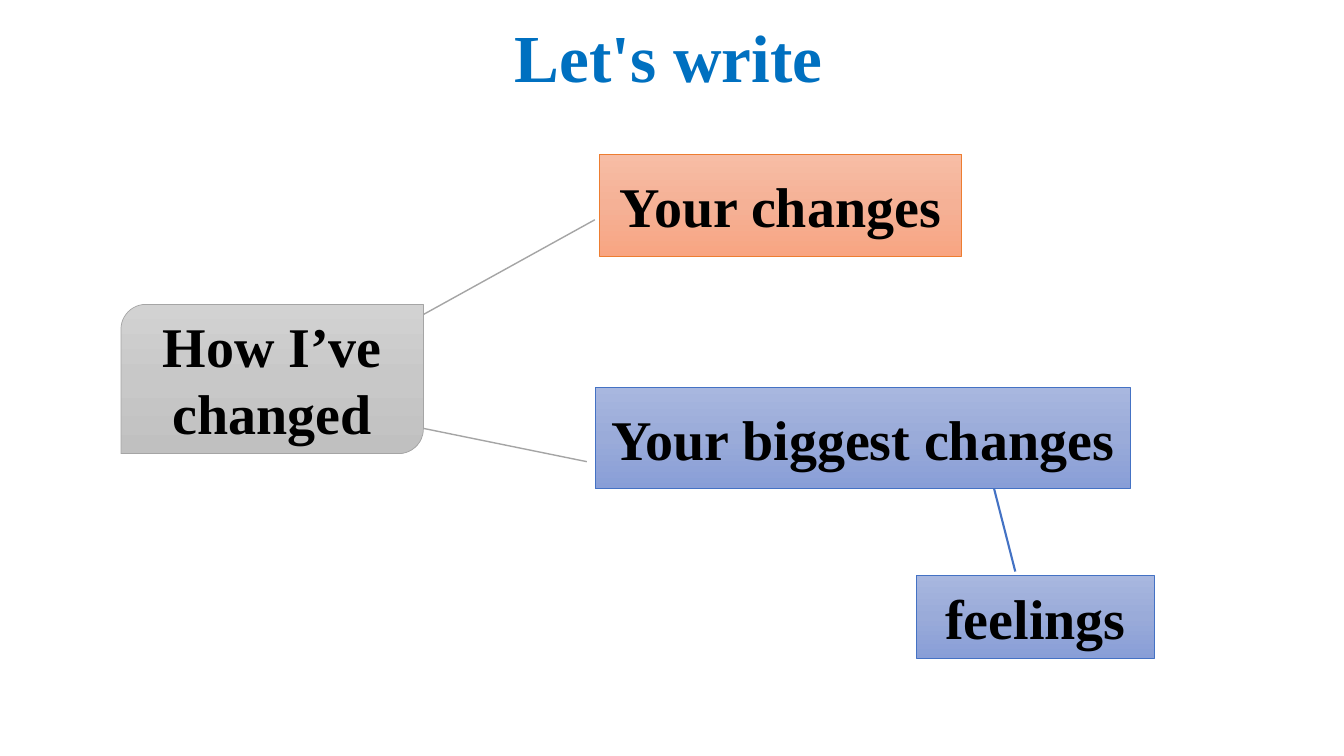
from copy import deepcopy

from lxml import etree
from pptx import Presentation
from pptx import util as u
from pptx.dml.color import RGBColor
from pptx.enum import shapes, text
from pptx.oxml import ns

BLACK = RGBColor(0x00, 0x00, 0x00)
TITLE_BLUE = RGBColor(0x00, 0x70, 0xC0)
GRAY = RGBColor(0xA5, 0xA5, 0xA5)
ORANGE = RGBColor(0xED, 0x7D, 0x31)
BLUE = RGBColor(0x44, 0x72, 0xC4)
GRAY_FILL = (RGBColor(0xD2, 0xD2, 0xD2), RGBColor(0xC8, 0xC8, 0xC8), RGBColor(0xC0, 0xC0, 0xC0))
ORANGE_FILL = (RGBColor(0xF7, 0xBD, 0xA5), RGBColor(0xF5, 0xB1, 0x96), RGBColor(0xF8, 0xA5, 0x82))
BLUE_FILL = (RGBColor(0xA8, 0xB7, 0xDF), RGBColor(0x9A, 0xAB, 0xD9), RGBColor(0x88, 0x9E, 0xD7))
RECT = shapes.MSO_SHAPE.RECTANGLE
ROOT = shapes.MSO_SHAPE.ROUND_2_DIAG_RECTANGLE


class MindMap:
    font_name = "Times New Roman"

    def __init__(self, prs):
        self.s = prs.slides.add_slide(prs.slide_layouts[5])

    def label(self, tf, words, size, color):
        tf.text = words
        p = tf.paragraphs[0]
        p.alignment = text.PP_ALIGN.CENTER
        p.font.name = self.font_name
        p.font.size = u.Pt(size)
        p.font.bold = True
        p.font.color.rgb = color
        return p

    def title(self, words, box):
        sp = self.s.shapes.title
        sp.left, sp.top, sp.width, sp.height = map(u.Inches, box)
        tf = sp.text_frame
        tf.word_wrap = True
        tf.auto_size = text.MSO_AUTO_SIZE.SHAPE_TO_FIT_TEXT
        tf.vertical_anchor = text.MSO_ANCHOR.TOP
        self.label(tf, words, 48, TITLE_BLUE).line_spacing = 0.9

    def node(self, words, box, colors, border, kind=RECT):
        sp = self.s.shapes.add_shape(kind, *map(u.Inches, box))
        sp.shadow.inherit = False
        sp.fill.gradient()
        sp.fill.gradient_angle = 270
        stops = sp._element.spPr.find(ns.qn("a:gradFill")).find(ns.qn("a:gsLst"))
        stops.insert(1, deepcopy(stops[0]))
        stops[1].set("pos", "50000")
        for stop, color in zip(sp.fill.gradient_stops, colors):
            stop.color.rgb = color
        sp.line.color.rgb = border
        sp.line.width = u.Pt(0.5)
        tf = sp.text_frame
        tf.word_wrap = True
        tf.vertical_anchor = text.MSO_ANCHOR.MIDDLE
        self.label(tf, words, 40, BLACK)

    def branch(self, start, end, color, width):
        ends = map(u.Inches, (*start, *end))
        line = self.s.shapes.add_connector(shapes.MSO_CONNECTOR.STRAIGHT, *ends)
        line.line.color.rgb = color
        line.line.width = u.Pt(width)
        etree.SubElement(line._element.spPr, ns.qn("a:effectLst"))


def main():
    prs = Presentation()
    prs.slide_width, prs.slide_height = u.Inches(13.33), u.Inches(7.5)
    m = MindMap(prs)
    m.title("Let's write", (-0.07, 0.19, 13.41, 0.83))
    m.node("How I’ve changed", (1.2, 3.02, 3, 1.48), GRAY_FILL, GRAY, ROOT)
    m.branch((4.2, 3.12), (5.9, 2.18), GRAY, 1)
    m.node("Your changes", (5.94, 1.53, 3.6, 1.01), ORANGE_FILL, ORANGE)
    m.branch((4.2, 4.25), (5.82, 4.58), GRAY, 1)
    m.node("Your biggest changes", (5.9, 3.84, 5.31, 1.01), BLUE_FILL, BLUE)
    m.branch((9.86, 4.85), (10.07, 5.67), BLUE, 1.5)
    m.node("feelings", (9.09, 5.71, 2.36, 0.82), BLUE_FILL, BLUE)
    prs.save("out.pptx")


if __name__ == "__main__":
    main()
